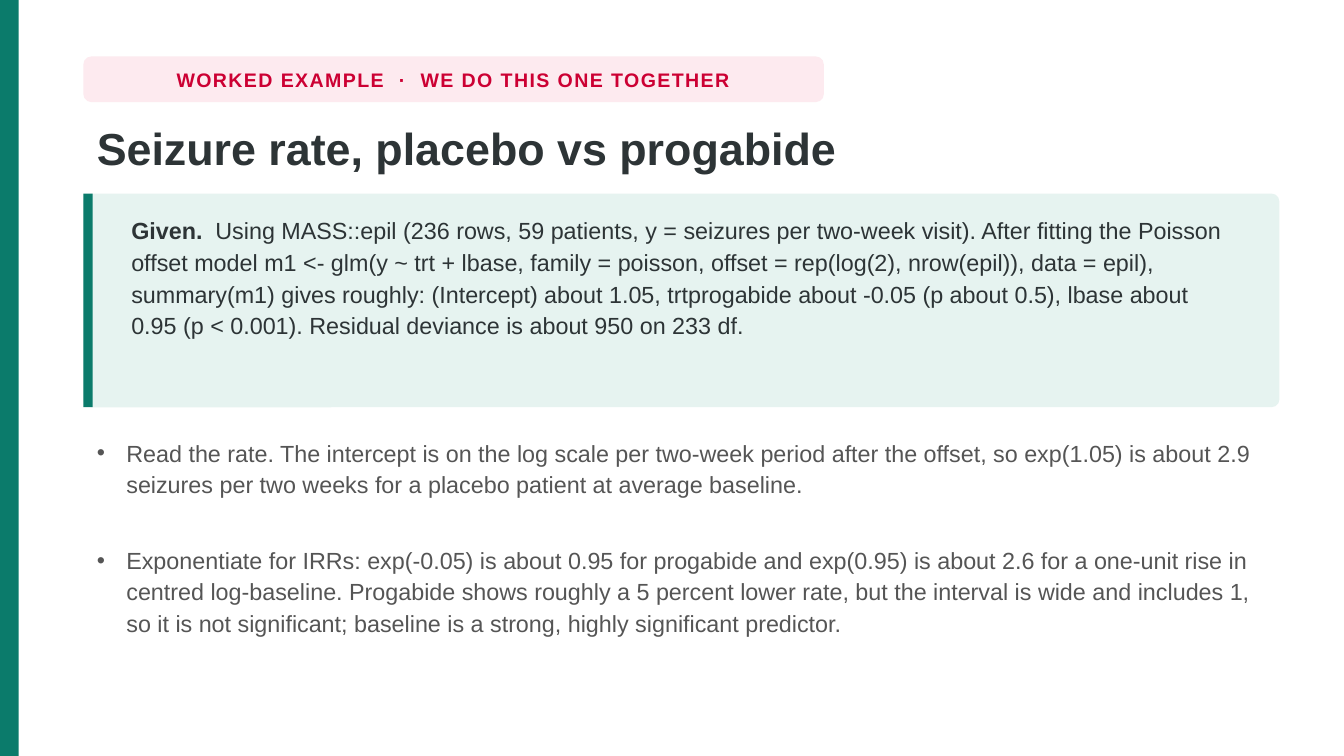
"""Build the worked-example slide on seizure rates."""
from dataclasses import dataclass

from lxml.etree import SubElement
from pptx import Presentation
from pptx.dml.color import RGBColor
from pptx.enum.shapes import MSO_SHAPE as Shape
from pptx.enum.text import MSO_ANCHOR as Anchor, MSO_AUTO_SIZE as AutoSize, PP_ALIGN as Align
from pptx.oxml.ns import qn
from pptx.util import Pt

TAG = "WORKED EXAMPLE  ·  WE DO THIS ONE TOGETHER"
TITLE = "Seizure rate, placebo vs progabide"
GIVEN_LABEL = "Given.  "
GIVEN = (
    "Using MASS::epil (236 rows, 59 patients, y = seizures per two-week visit). "
    "After fitting the Poisson offset model m1 <- glm(y ~ trt + lbase, family = poisson, "
    "offset = rep(log(2), nrow(epil)), data = epil), summary(m1) gives roughly: "
    "(Intercept) about 1.05, trtprogabide about -0.05 (p about 0.5), lbase about 0.95 "
    "(p < 0.001). Residual deviance is about 950 on 233 df."
)
STEPS = [
    ("Read the rate. The intercept is on the log scale per two-week period after the offset, "
     "so exp(1.05) is about 2.9 seizures per two weeks for a placebo patient at average "
     "baseline.", 51.12),
    ("Exponentiate for IRRs: exp(-0.05) is about 0.95 for progabide and exp(0.95) is about 2.6 "
     "for a one-unit rise in centred log-baseline. Progabide shows roughly a 5 percent lower "
     "rate, but the interval is wide and includes 1, so it is not significant; baseline is a "
     "strong, highly significant predictor.", 83.52),
]


@dataclass(frozen=True)
class Theme:
    font: str = "Arial"
    accent: str = "0B7B6B"
    card: str = "E6F3F0"
    tag_fill: str = "FDEAEF"
    tag_ink: str = "CC0033"
    ink: str = "2D3436"
    step_ink: str = "555555"
    tag_size: float = 10.5
    title_size: float = 24
    body_size: float = 12.5


THEME = Theme()
WIDTH, HEIGHT = 720, 405
LEFT, CONTENT_WIDTH = 44.64, 640.8
CARD_TOP, CARD_HEIGHT = 103.68, 114.48
STEPS_TOP, STEP_GAP, STEP_INDENT = 229.68, 6.48, 15.84
CORNER = 4.32


def add_panel(slide, left, top, width, height, color, corner=0):
    kind = Shape.ROUNDED_RECTANGLE if corner else Shape.RECTANGLE
    panel = slide.shapes.add_shape(kind, Pt(left), Pt(top), Pt(width), Pt(height))
    if corner:
        panel.adjustments[0] = corner / min(width, height)
    panel.shadow.inherit = False
    panel.fill.solid()
    panel.fill.fore_color.rgb = RGBColor.from_string(color)
    panel.line.fill.background()
    return panel


def style_run(run, size, color, bold=False):
    run.font.name = THEME.font
    run.font.size = Pt(size)
    run.font.bold = bold
    run.font.color.rgb = RGBColor.from_string(color)


def fill_placeholder(holder, top, height, text, size, color, spacing, bold=False):
    holder.left, holder.top = Pt(LEFT), Pt(top)
    holder.width, holder.height = Pt(CONTENT_WIDTH), Pt(height)
    frame = holder.text_frame
    frame.text = text
    frame.word_wrap = True
    frame.auto_size = AutoSize.NONE
    frame.vertical_anchor = Anchor.TOP
    paragraph = frame.paragraphs[0]
    paragraph.alignment = Align.LEFT
    paragraph.line_spacing = spacing
    paragraph.space_before = Pt(0)
    style_run(paragraph.runs[0], size, color, bold)
    return paragraph


def add_bullet(paragraph, indent):
    properties = paragraph._p.get_or_add_pPr()
    properties.set("marL", str(Pt(indent)))
    properties.set("indent", str(-Pt(indent)))
    SubElement(properties, qn("a:buChar")).set("char", "•")


def add_tag(slide):
    tag = add_panel(slide, LEFT, 30.24, 396.72, 24.48, THEME.tag_fill, CORNER)
    frame = tag.text_frame
    frame.text = TAG
    frame.word_wrap = False
    frame.vertical_anchor = Anchor.MIDDLE
    paragraph = frame.paragraphs[0]
    paragraph.alignment = Align.CENTER
    label = paragraph.runs[0]
    style_run(label, THEME.tag_size, THEME.tag_ink, bold=True)
    label._r.get_or_add_rPr().set("spc", "80")


def add_given(slide):
    card = add_panel(slide, LEFT, CARD_TOP, CONTENT_WIDTH, CARD_HEIGHT, THEME.card, CORNER)
    add_panel(slide, LEFT, CARD_TOP, 5.04, CARD_HEIGHT, THEME.accent)
    frame = card.text_frame
    frame.word_wrap = True
    frame.vertical_anchor = Anchor.TOP
    frame.margin_left, frame.margin_right = Pt(24.48), Pt(25.92)
    frame.margin_top = frame.margin_bottom = Pt(8.64)
    paragraph = frame.paragraphs[0]
    paragraph.alignment = Align.LEFT
    paragraph.line_spacing = 1.14
    for text, bold in ((GIVEN_LABEL, True), (GIVEN, False)):
        run = paragraph.add_run()
        run.text = text
        style_run(run, THEME.body_size, THEME.ink, bold)


def main():
    deck = Presentation()
    deck.slide_width, deck.slide_height = Pt(WIDTH), Pt(HEIGHT)
    two_content = deck.slide_layouts[3]
    slide = deck.slides.add_slide(two_content)
    title, *step_holders = slide.placeholders

    add_panel(slide, 0, 0, 10.08, HEIGHT, THEME.accent)
    add_tag(slide)
    fill_placeholder(title, 60.48, 40.32, TITLE, THEME.title_size, THEME.ink, 1.02, bold=True)
    add_given(slide)

    top = STEPS_TOP
    for holder, (step, height) in zip(step_holders, STEPS):
        paragraph = fill_placeholder(
            holder, top, height, step, THEME.body_size, THEME.step_ink, 1.12)
        add_bullet(paragraph, STEP_INDENT)
        top += height + STEP_GAP

    deck.save("out.pptx")


if __name__ == "__main__":
    main()
